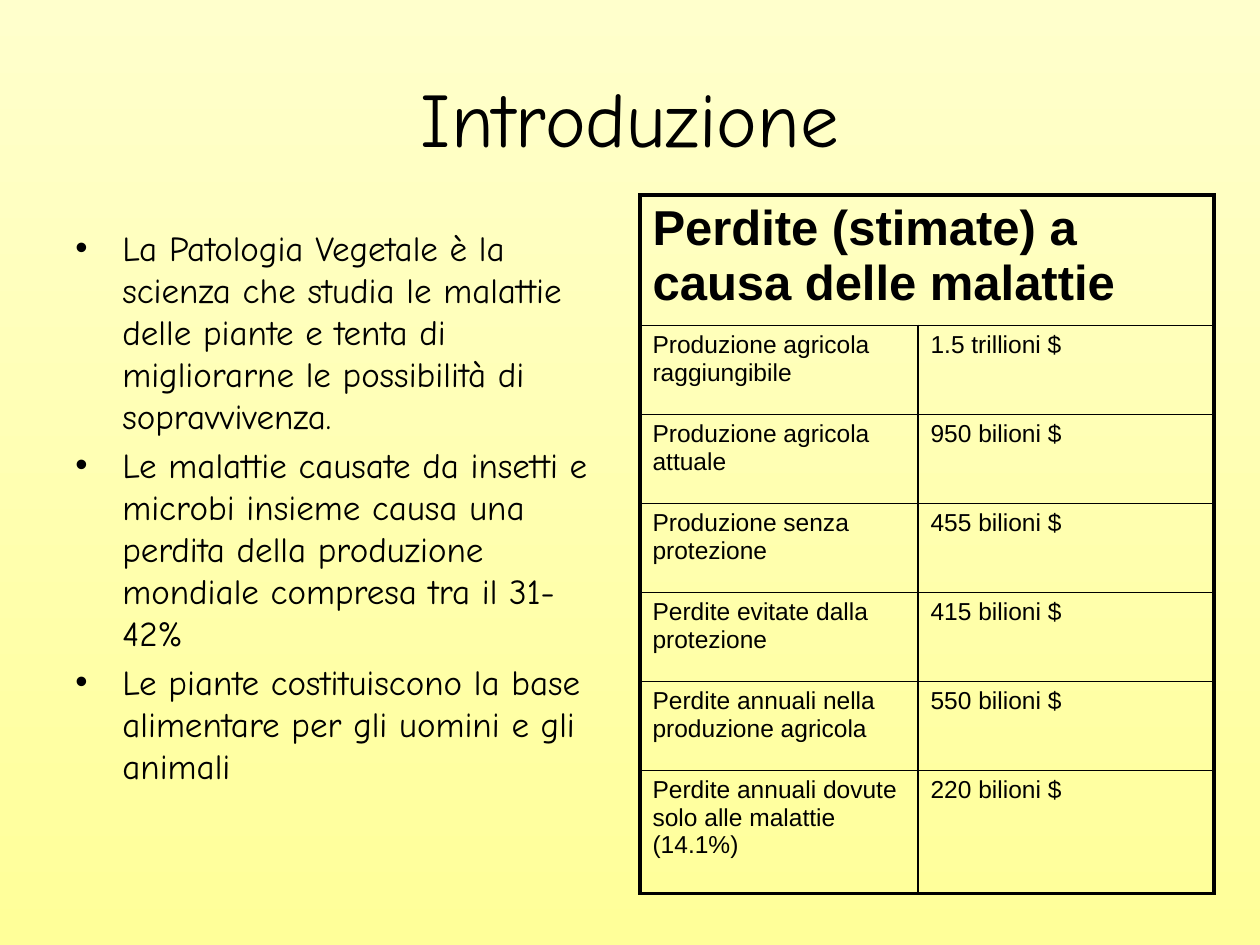
from dataclasses import dataclass

from lxml.etree import SubElement
from pptx import Presentation
from pptx.dml.color import RGBColor as RGB
from pptx.enum.text import MSO_ANCHOR as Anchor, PP_ALIGN as Align
from pptx.oxml.ns import qn
from pptx.util import Pt

PX = 914400 // 126  # EMU in one px


@dataclass(frozen=True)
class Theme:
    ink: RGB = RGB(0, 0, 0)
    top: RGB = RGB(0xFF, 0xFF, 0xCC)
    bottom: RGB = RGB(0xFF, 0xFF, 0x99)
    text_font: str = "Comic Neue"
    table_font: str = "Arial"
    title_size: int = 44
    body_size: int = 20
    heading_size: int = 28
    cell_size: int = 14
    thick: float = 2.25
    thin: float = 1


THEME = Theme()

TITLE = "Introduzione"
POINTS = [
    "La Patologia Vegetale è la scienza che studia le malattie delle piante "
    "e tenta di migliorarne le possibilità di sopravvivenza.",
    "Le malattie causate da insetti e microbi insieme causa una perdita "
    "della produzione mondiale compresa tra il 31-42%",
    "Le piante costituiscono la base alimentare per gli uomini e gli animali",
]
HEADING = "Perdite (stimate) a causa delle malattie"
LOSSES = [
    ("Produzione agricola raggiungibile", "1.5 trillioni $"),
    ("Produzione agricola attuale", "950 bilioni $"),
    ("Produzione senza protezione", "455 bilioni $"),
    ("Perdite evitate dalla protezione", "415 bilioni $"),
    ("Perdite annuali nella produzione agricola", "550 bilioni $"),
    ("Perdite annuali dovute solo alle malattie (14.1%)", "220 bilioni $"),
]
COLUMN_WIDTHS = [278, 296]
ROW_HEIGHTS = [121, 89, 89, 89, 89, 89, 123]


def emu(box):
    return [length * PX for length in box]


def format_text(paragraph, font_name, size, bold=False):
    for run in paragraph.runs:
        font = run.font
        font.name, font.size, font.bold = font_name, Pt(size), bold
        font.color.rgb = THEME.ink


def add_background(slide):
    fill = slide.background.fill
    fill.gradient()
    fill.gradient_angle = 270
    for stop, color in zip(fill.gradient_stops, (THEME.top, THEME.bottom)):
        stop.color.rgb = color


def place_title(slide, box):
    title = slide.shapes.title
    title.left, title.top, title.width, title.height = emu(box)
    frame = title.text_frame
    frame.text = TITLE
    frame.vertical_anchor = Anchor.MIDDLE
    paragraph = frame.paragraphs[0]
    paragraph.alignment = Align.CENTER
    format_text(paragraph, THEME.text_font, THEME.title_size)


def add_bullets(slide, box, indent):
    frame = slide.shapes.add_textbox(*emu(box)).text_frame
    frame.word_wrap = True
    frame.text = "\n".join(POINTS)
    for index, paragraph in enumerate(frame.paragraphs):
        paragraph.space_before = Pt(THEME.body_size * 0.2 if index else 0)
        format_text(paragraph, THEME.text_font, THEME.body_size)
        # Hanging bullet
        properties = paragraph._p.get_or_add_pPr()
        properties.set("marL", str(indent * PX))
        properties.set("indent", str(-indent * PX))
        SubElement(properties, qn("a:buFont"), typeface=THEME.table_font)
        SubElement(properties, qn("a:buChar"), char="•")


def set_borders(cell, thick_sides):
    properties = cell._tc.get_or_add_tcPr()
    for side in "LRTB":
        width = THEME.thick if side in thick_sides else THEME.thin
        line = SubElement(properties, qn(f"a:ln{side}"), w=str(Pt(width)))
        fill = SubElement(line, qn("a:solidFill"))
        SubElement(fill, qn("a:srgbClr"), val=str(THEME.ink))


def add_loss_table(slide, box):
    rows, columns = len(ROW_HEIGHTS), len(COLUMN_WIDTHS)
    table = slide.shapes.add_table(rows, columns, *emu(box)).table
    table.first_row = table.horz_banding = False
    for column, width in zip(table.columns, COLUMN_WIDTHS):
        column.width = width * PX
    for row, height in zip(table.rows, ROW_HEIGHTS):
        row.height = height * PX
    table.cell(0, 0).merge(table.cell(0, columns - 1))

    for r, texts in enumerate([(HEADING, ""), *LOSSES]):
        for c, text in enumerate(texts):
            cell = table.cell(r, c)
            cell.text = text
            is_heading = r == 0
            size = THEME.heading_size if is_heading else THEME.cell_size
            format_text(cell.text_frame.paragraphs[0], THEME.table_font, size, is_heading)
            # Thick outer frame, thin inner grid
            edges = {"L": c == 0, "R": is_heading or c == columns - 1,
                     "T": is_heading, "B": r == rows - 1}
            set_borders(cell, [side for side, outer in edges.items() if outer])
            cell.fill.background()


def main():
    presentation = Presentation()
    presentation.slide_width, presentation.slide_height = emu((1260, 945))
    slide = presentation.slides.add_slide(presentation.slide_layouts[5])
    add_background(slide)
    place_title(slide, (63, 38, 1134, 157))
    add_bullets(slide, (63, 220, 557, 624), indent=47)
    add_loss_table(slide, (640, 195, sum(COLUMN_WIDTHS), sum(ROW_HEIGHTS)))
    presentation.save("out.pptx")


if __name__ == "__main__":
    main()
